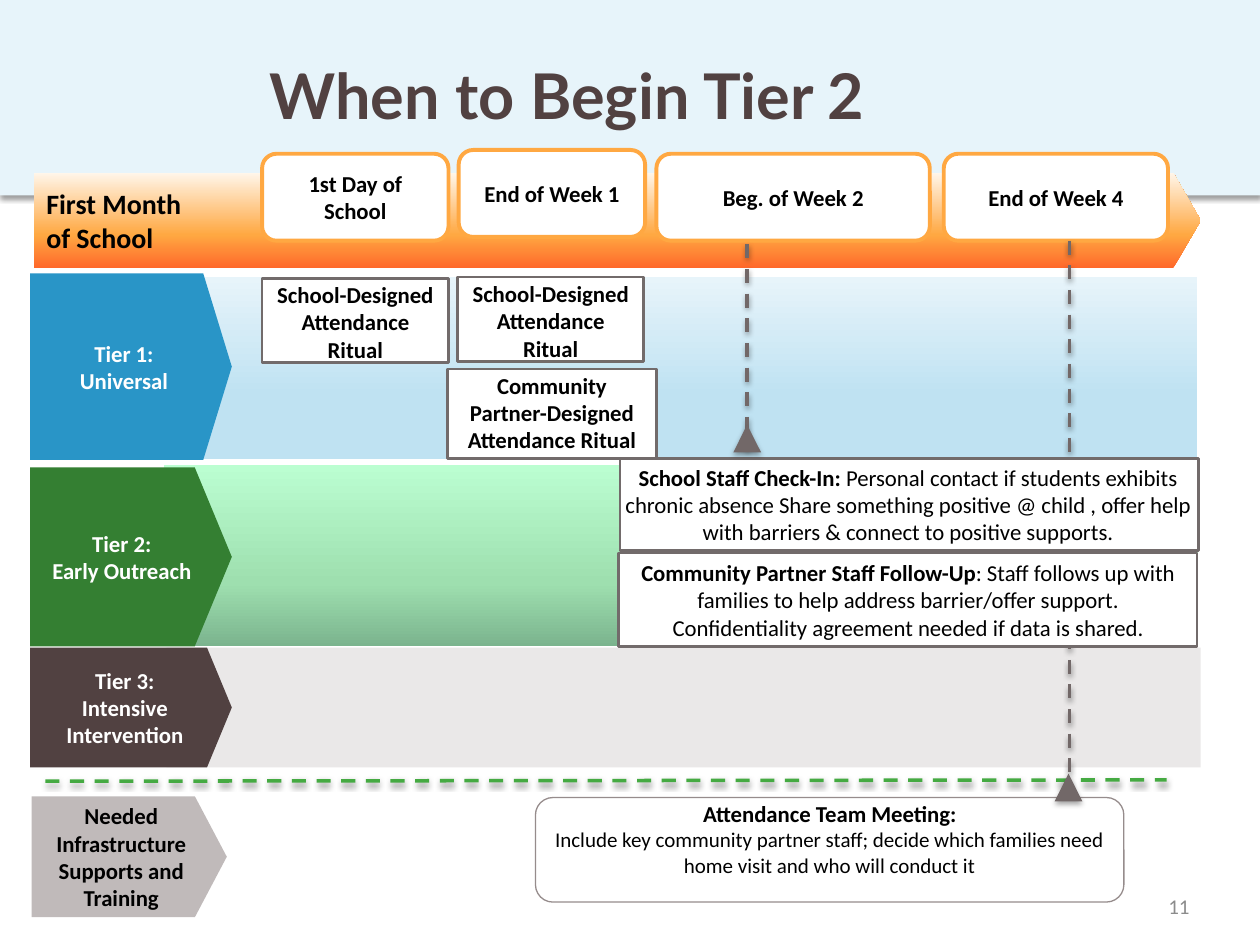
"""Build the slide that shows when Tier 2 attendance support begins."""
from typing import NamedTuple

from lxml import etree
from pptx import Presentation
from pptx import util as u
from pptx.dml.color import RGBColor
from pptx.enum import dml, shapes, text
from pptx.oxml import ns

BLACK = RGBColor(0x00, 0x00, 0x00)
WHITE = RGBColor(0xFF, 0xFF, 0xFF)
BROWN = RGBColor(0x51, 0x41, 0x41)
PALE_BLUE = RGBColor(0xE7, 0xF4, 0xFA)
LIGHT_BLUE = RGBColor(0xBF, 0xE2, 0xF2)
BLUE = RGBColor(0x29, 0x95, 0xC7)
GREEN = RGBColor(0x34, 0x7F, 0x32)
DASH_GREEN = RGBColor(0x45, 0xAA, 0x42)
ORANGE = RGBColor(0xFF, 0xA8, 0x42)
PALE_GRAY = RGBColor(0xEA, 0xE8, 0xE8)
GRAY = RGBColor(0xC0, 0xBA, 0xBA)
NOTE_GRAY = RGBColor(0x96, 0x8C, 0x8C)
BOX_GRAY = RGBColor(0x72, 0x6B, 0x6B)
ARROW_GRAY = RGBColor(0x72, 0x68, 0x68)
NUMBER_GRAY = RGBColor(0x8C, 0x8C, 0x8C)
SUNSET = (RGBColor(0xFF, 0x68, 0x2A), ORANGE, RGBColor(0xFF, 0xF6, 0xEA))
SKY = (LIGHT_BLUE, LIGHT_BLUE, PALE_BLUE)
MEADOW = (RGBColor(0x7B, 0xB4, 0x8E), RGBColor(0x9E, 0xDF, 0xAF), RGBColor(0xBB, 0xFE, 0xD1))

KIND = shapes.MSO_SHAPE
ALIGN = text.PP_ALIGN
ANCHOR = text.MSO_ANCHOR


class Box(NamedTuple):
    x: float
    y: float
    w: float
    h: float

    def emu(self) -> list:
        return [u.Inches(v) for v in self]


class Span(NamedTuple):
    text: str
    bold: bool = True
    size: float = 13


class Tier(NamedTuple):
    label: tuple
    box: Box
    notch: float
    fill: RGBColor
    color: RGBColor = WHITE


class Ritual(NamedTuple):
    label: str
    box: Box
    text_h: float


BANDS = [
    (Box(1.32, 5.14, 8.21, 0.95), PALE_GRAY),
    (Box(1.3, 3.69, 8.21, 1.44), MEADOW),
    (Box(1.29, 2.2, 8.21, 1.44), SKY),
]
TIERS = [
    Tier(("Tier 1:", "Universal"), Box(0.24, 2.17, 1.6, 1.48), 0.153, BLUE),
    Tier(("Tier 2:", "Early Outreach"), Box(0.24, 3.71, 1.6, 1.42), 0.207, GREEN),
    Tier(("Tier 3:", "Intensive Intervention"), Box(0.24, 5.14, 1.6, 0.95), 0.207, BROWN),
    Tier(("Needed Infrastructure Supports and Training",),
         Box(0.25, 6.32, 1.55, 0.96), 0.264, GRAY, BLACK),
]
MILESTONES = [
    ("1st Day of School", Box(2.08, 1.22, 1.48, 0.69)),
    ("End of Week 1", Box(3.64, 1.19, 1.48, 0.69)),
    ("Beg. of Week 2", Box(5.21, 1.22, 2.17, 0.69)),
    ("End of Week 4", Box(7.49, 1.22, 1.78, 0.69)),
]
SCHOOL_RITUAL = "School-Designed Attendance Ritual"
RITUALS = [
    Ritual(SCHOOL_RITUAL, Box(2.08, 2.21, 1.48, 0.67), 0.23),
    Ritual(SCHOOL_RITUAL, Box(3.63, 2.2, 1.48, 0.67), 0.23),
    Ritual("Community Partner-Designed Attendance Ritual", Box(3.55, 2.93, 1.66, 0.71), 0.76),
]


def set_effects(sp, alpha: int = 0, dist: float = 1.6) -> None:
    effects = etree.SubElement(sp._element.spPr, ns.qn("a:effectLst"))
    if alpha:
        shadow = etree.SubElement(effects, ns.qn("a:outerShdw"), blurRad=str(u.Pt(3.1)),
                                  dist=str(u.Pt(dist)), dir="5400000", rotWithShape="0")
        color = etree.SubElement(shadow, ns.qn("a:srgbClr"), val=str(BLACK))
        etree.SubElement(color, ns.qn("a:alpha"), val=str(alpha * 1000))


def set_gradient(sp, colors: tuple) -> None:
    sp.fill.gradient()
    sp.fill.gradient_angle = 90
    stops = sp._element.spPr.find(".//" + ns.qn("a:gsLst"))
    for stop in list(stops):
        stops.remove(stop)
    for pos, color in zip((0, 35, 100), colors):
        stop = etree.SubElement(stops, ns.qn("a:gs"), pos=str(pos * 1000))
        etree.SubElement(stop, ns.qn("a:srgbClr"), val=str(color))


def add_shape(parent, kind, box: Box, fill, line=None, width: float = 1.5,
              adj: float | None = None, shadow: int = 0, dist: float = 1.6):
    sp = parent.add_shape(kind, *box.emu())
    if adj is not None:
        sp.adjustments[0] = adj
    if isinstance(fill, RGBColor):
        sp.fill.solid()
        sp.fill.fore_color.rgb = fill
    else:
        set_gradient(sp, fill)
    if line is None:
        sp.line.fill.background()
    else:
        sp.line.color.rgb = line
        sp.line.width = u.Pt(width)
    set_effects(sp, shadow, dist)
    return sp


def add_dash(parent, x1: float, y1: float, x2: float, y2: float, color: RGBColor) -> None:
    ends = [u.Inches(v) for v in (x1, y1, x2, y2)]
    sp = parent.add_connector(shapes.MSO_CONNECTOR.STRAIGHT, *ends)
    sp.line.color.rgb = color
    sp.line.width = u.Pt(2)
    sp.line.dash_style = dml.MSO_LINE.DASH
    set_effects(sp, 38)


def write(sp, *paras, size: float = 13, bold: bool = True, color: RGBColor = BLACK,
          font: str = "Calibri", align=ALIGN.CENTER, anchor=ANCHOR.MIDDLE):
    tf = sp.text_frame
    tf.word_wrap = True
    tf.vertical_anchor = anchor
    for i, para in enumerate(paras):
        p = tf.add_paragraph() if i else tf.paragraphs[0]
        p.alignment = align
        for span in [Span(para, bold, size)] if isinstance(para, str) else para:
            r = p.add_run()
            r.text = span.text
            r.font.name = font
            r.font.size = u.Pt(span.size)
            r.font.bold = span.bold
            r.font.color.rgb = color
    return tf


def add_ritual(parent, ritual: Ritual) -> None:
    group = parent.add_group_shape().shapes
    box = ritual.box
    add_shape(group, KIND.RECTANGLE, box, WHITE, BOX_GRAY)
    label = group.add_textbox(*box._replace(y=box.y - 0.03, h=ritual.text_h).emu())
    write(label, ritual.label, anchor=ANCHOR.TOP)


def main() -> None:
    prs = Presentation()
    prs.slide_width, prs.slide_height = u.Inches(10), u.Inches(7.5)
    s = prs.slides.add_slide(prs.slide_layouts[5])
    sps = s.shapes

    add_shape(sps, KIND.RECTANGLE, Box(0, 0, 10, 1.55), PALE_BLUE, shadow=38)
    for box, fill in BANDS:
        add_shape(sps, KIND.RECTANGLE, box, fill)
    number = sps.add_textbox(*Box(7.21, 6.99, 2.33, 0.4).emu())
    write(number, "11", size=12, bold=False, color=NUMBER_GRAY, align=ALIGN.RIGHT)

    title = sps.title
    title.left, title.top, title.width, title.height = Box(0, 0, 9, 1.5).emu()
    write(title, "When to Begin Tier 2", size=36, color=BROWN, font="Lato")
    sps._spTree.append(title._element)

    for tier in TIERS:
        sp = add_shape(sps, KIND.PENTAGON, tier.box, tier.fill, adj=tier.notch)
        write(sp, *tier.label, color=tier.color)
    month = add_shape(sps, KIND.PENTAGON, Box(0.27, 1.37, 9.26, 0.76), SUNSET, adj=0.289)
    write(month, "First Month", "of School", size=16, align=ALIGN.LEFT)
    add_dash(sps, 0.36, 6.2, 9.26, 6.19, DASH_GREEN)

    meeting = add_shape(sps, KIND.ROUNDED_RECTANGLE, Box(4.25, 6.33, 4.67, 0.83),
                        WHITE, NOTE_GRAY, 0.75)
    tf = write(meeting, "Attendance Team Meeting:",
               [Span("Include key community partner staff; decide which families need "
                     "home visit and who will conduct it", False, 12)])
    tf.margin_top, tf.margin_bottom = 0, u.Inches(0.18)

    for label, box in MILESTONES:
        write(add_shape(sps, KIND.ROUNDED_RECTANGLE, box, WHITE, ORANGE, 2.25), label)
    for ritual in RITUALS:
        add_ritual(sps, ritual)

    add_dash(sps, 8.49, 1.91, 8.49, 6.25, ARROW_GRAY)
    add_shape(sps, KIND.RECTANGLE, Box(4.92, 3.64, 4.59, 0.73), WHITE, BOX_GRAY)
    check_in = sps.add_textbox(*Box(4.82, 3.63, 4.77, 0.76).emu())
    write(check_in, [Span("School Staff Check-In: "),
                     Span("Personal contact if students exhibits chronic absence Share "
                          "something positive @ child , offer help with barriers & connect "
                          "to positive supports.", False)], anchor=ANCHOR.TOP)
    add_dash(sps, 5.93, 1.94, 5.93, 3.57, ARROW_GRAY)
    for x, y in ((5.82, 3.37), (8.37, 6.14)):
        add_shape(sps, KIND.ISOSCELES_TRIANGLE, Box(x, y, 0.22, 0.22), ARROW_GRAY,
                  shadow=35, dist=1.8)
    follow_up = add_shape(sps, KIND.RECTANGLE, Box(4.91, 4.39, 4.59, 0.74), WHITE, BOX_GRAY)
    write(follow_up, [Span("Community Partner Staff Follow-Up"),
                      Span(": Staff follows up with families to help address barrier/offer "
                           "support. Confidentiality agreement needed if data is shared.",
                           False)])
    prs.save("out.pptx")


if __name__ == "__main__":
    main()
